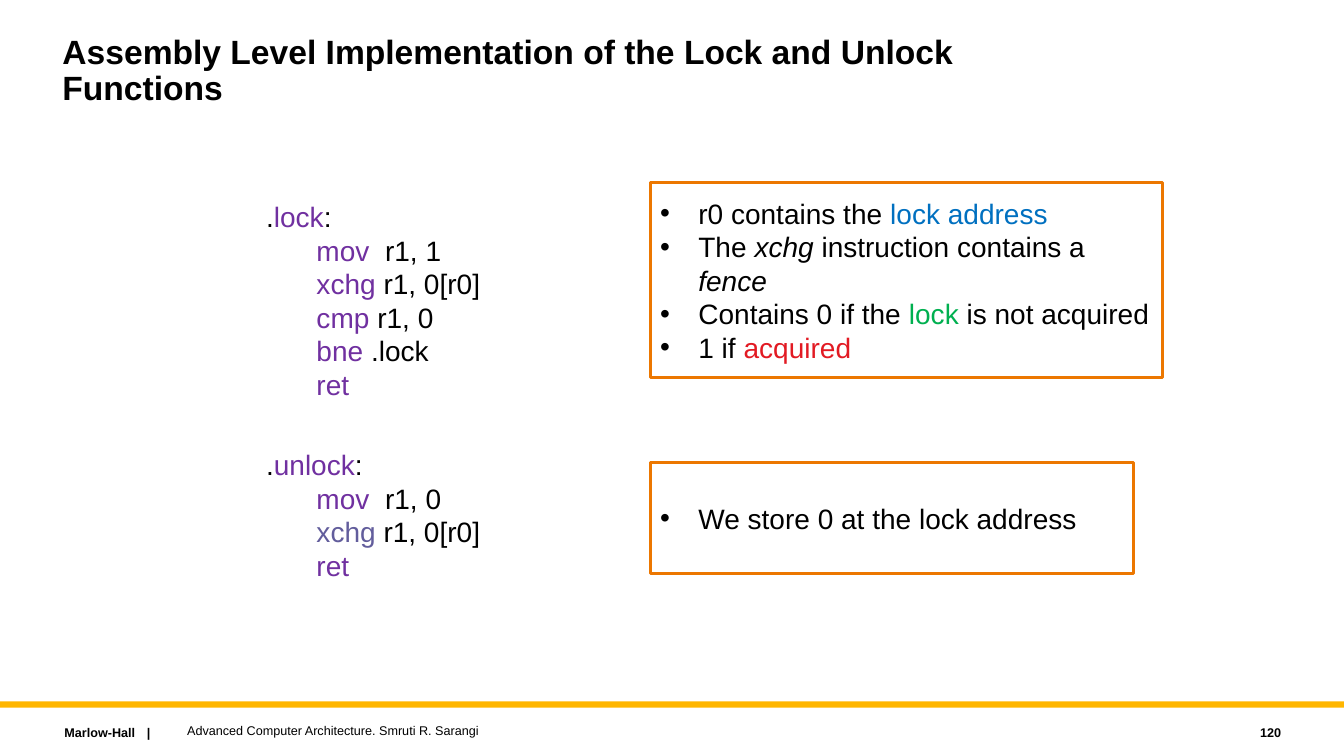
from lxml.etree import SubElement
from pptx import Presentation
from pptx.dml.color import RGBColor
from pptx.enum.shapes import MSO_SHAPE as Preset
from pptx.enum.text import MSO_ANCHOR as Anchor, PP_ALIGN as Align
from pptx.oxml.ns import qn
from pptx.util import Inches, Pt

BLACK = RGBColor(0x00, 0x00, 0x00)
WHITE = RGBColor(0xFF, 0xFF, 0xFF)
GOLD = RGBColor(0xFF, 0xB6, 0x00)
ORANGE = RGBColor(0xEC, 0x77, 0x00)
PURPLE = RGBColor(0x70, 0x30, 0xA0)
VIOLET = RGBColor(0x62, 0x5D, 0x9C)
BLUE = RGBColor(0x00, 0x70, 0xC0)
GREEN = RGBColor(0x00, 0xB0, 0x50)
RED = RGBColor(0xE2, 0x1A, 0x23)


class SlideBuilder:
    FONT = "Arial"
    COLUMNS, ROWS = 160, 90
    BODY_SIZE, SMALL_SIZE, TITLE_SIZE = 20, 9, 24
    BULLET_INDENT = Inches(0.38)

    def __init__(self, presentation):
        self.column = presentation.slide_width / self.COLUMNS
        self.row = presentation.slide_height / self.ROWS
        self.slide = presentation.slides.add_slide(presentation.slide_layouts[6])

    def place(self, left, top, width, height):
        return (round(left * self.column), round(top * self.row),
                round(width * self.column), round(height * self.row))

    def rectangle(self, area, fill, outline=None):
        shape = self.slide.shapes.add_shape(Preset.RECTANGLE, *self.place(*area))
        shape.shadow.inherit = False
        shape.fill.solid()
        shape.fill.fore_color.rgb = fill
        if outline is None:
            shape.line.fill.background()
        else:
            shape.line.color.rgb = outline
            shape.line.width = Pt(2.25)
        return shape

    def fill_frame(self, frame, paragraphs, size, bold=False, anchor=Anchor.TOP,
                   align=Align.LEFT, spacing=None, bullet=False, tab_stop=None):
        frame.word_wrap = True
        frame.vertical_anchor = anchor
        for index, runs in enumerate(paragraphs):
            paragraph = frame.add_paragraph() if index else frame.paragraphs[0]
            paragraph.alignment = align
            if spacing:
                paragraph.line_spacing = spacing
            properties = paragraph._p.get_or_add_pPr()
            if bullet:
                properties.set("marL", str(self.BULLET_INDENT))
                properties.set("indent", str(-self.BULLET_INDENT))
                SubElement(properties, qn("a:buFont"), typeface=self.FONT)
                SubElement(properties, qn("a:buChar"), char="•")
            if tab_stop:
                tabs = SubElement(properties, qn("a:tabLst"))
                SubElement(tabs, qn("a:tab"), pos=str(round(tab_stop * self.column)), algn="l")
            paragraph.font.size = Pt(size)
            for words, color, *italic in runs:
                run = paragraph.add_run()
                run.text = words
                run.font.name = self.FONT
                run.font.size = Pt(size)
                run.font.bold = bold
                run.font.italic = bool(italic)
                run.font.color.rgb = color

    def text(self, area, paragraphs, size, **style):
        box = self.slide.shapes.add_textbox(*self.place(*area))
        self.fill_frame(box.text_frame, paragraphs, size, **style)

    def code(self, area, label, instructions):
        lines = [[(".", BLACK), (label, PURPLE), (":", BLACK)]]
        for name, operands, color in instructions:
            line = [("\t", BLACK), (name, color)]
            if operands:
                line.append((operands, BLACK))
            lines.append(line)
        self.text(area, lines, self.BODY_SIZE)

    def note(self, area, points):
        shape = self.rectangle(area, WHITE, ORANGE)
        self.fill_frame(shape.text_frame, points, self.BODY_SIZE,
                        anchor=Anchor.MIDDLE, bullet=True)

    def footer(self, area, words, **style):
        self.text(area, [[(words, BLACK)]], self.SMALL_SIZE, **style)

    def title(self, area, words):
        self.text(area, [[(words, BLACK)]], self.TITLE_SIZE, bold=True, spacing=0.9)


def main():
    presentation = Presentation()
    presentation.slide_width = Inches(13.33)
    presentation.slide_height = Inches(7.5)
    builder = SlideBuilder(presentation)

    builder.rectangle((0, 83.5, 160, 0.75), GOLD)
    builder.footer((6.5, 85.7, 27.25, 3), "Marlow-Hall\t|", bold=True, tab_stop=9.8)
    builder.title((6.25, 3.6, 120, 10.8),
                  "Assembly Level Implementation of the Lock and Unlock Functions")
    builder.footer((21.1, 85.4, 96, 3), "Advanced Computer Architecture. Smruti R. Sarangi",
                   anchor=Anchor.MIDDLE)
    builder.footer((136.9, 85.7, 16.8, 3), "120", bold=True,
                   anchor=Anchor.MIDDLE, align=Align.RIGHT)

    builder.code((30.5, 23.15, 39.1, 25.45), "lock", [
        ("mov", "  r1, 1", PURPLE),
        ("xchg", " r1, 0[r0]", PURPLE),
        ("cmp", " r1, 0", PURPLE),
        ("bne", " .lock", PURPLE),
        ("ret", "", PURPLE),
    ])
    builder.note((77.4, 21.7, 61, 23.3), [
        [("r0 contains the ", BLACK), ("lock address", BLUE)],
        [("The ", BLACK), ("xchg", BLACK, True),
         (" instruction contains a ", BLACK), ("fence", BLACK, True)],
        [("Contains 0 if the ", BLACK), ("lock", GREEN), (" is not acquired", BLACK)],
        [("1 if ", BLACK), ("acquired", RED)],
    ])

    builder.code((30.5, 52.7, 39.1, 21.35), "unlock", [
        ("mov", "  r1, 0", PURPLE),
        ("xchg", " r1, 0[r0]", VIOLET),
        ("ret", "", PURPLE),
    ])
    builder.note((77.4, 55.1, 57.5, 13.2), [[("We store 0 at the lock address", BLACK)]])

    presentation.save("out.pptx")


if __name__ == "__main__":
    main()
